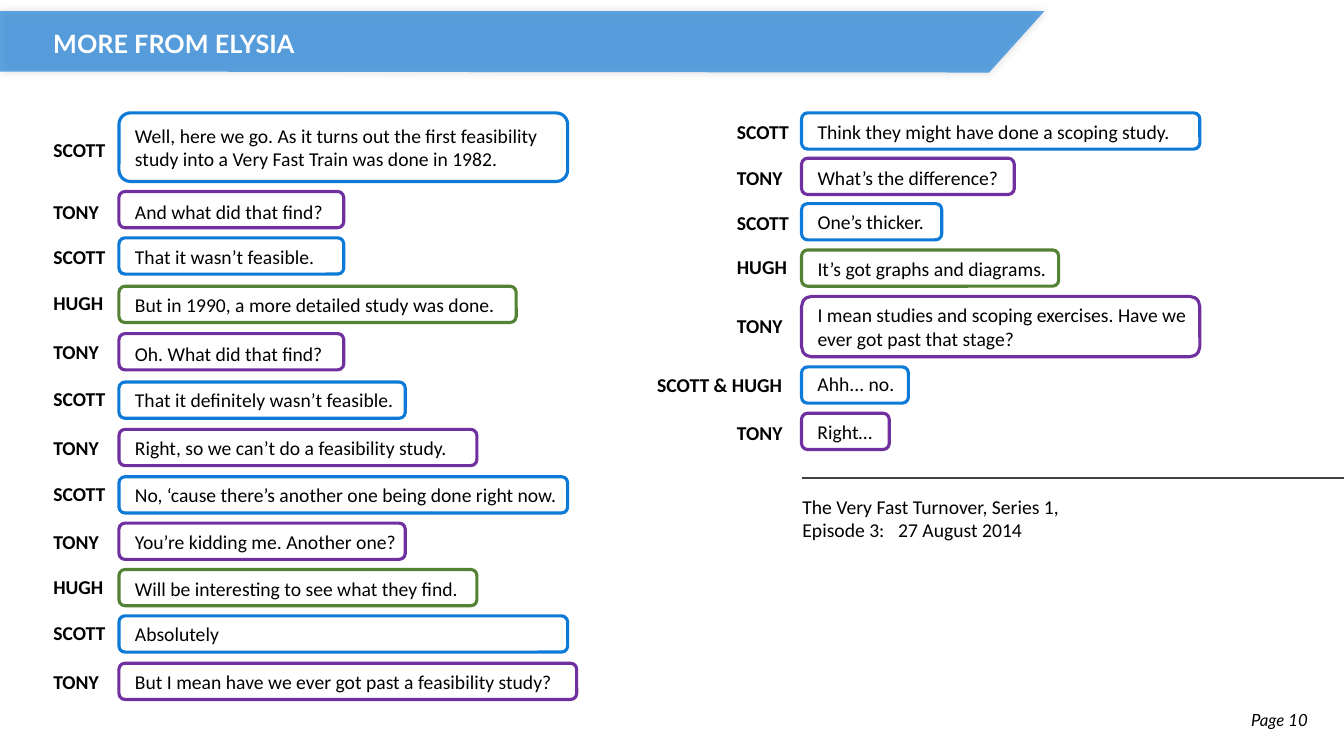
"""Build the "More from Elysia" dialogue slide."""
from lxml import etree
from pptx import Presentation
from pptx.dml.color import RGBColor
from pptx.enum import shapes, text
from pptx.oxml import parse_xml
from pptx.oxml.ns import nsdecls, qn
from pptx.util import Inches, Pt

BLUE, PURPLE, GREEN = "0E7AD8", "7030A0", "548235"
SPEAKER_COLOURS = {"SCOTT": BLUE, "SCOTT & HUGH": BLUE, "TONY": PURPLE, "HUGH": GREEN}

LEFT_LINES = [
    ("SCOTT", 1.32, 1.12, 1.18, 4.45, 0.68, "Well, here we go. As it turns out the first feasibility "
     "study into a Very Fast Train was done in 1982."),
    ("TONY", 1.93, 1.9, 1.93, 2.23, 0.36, "And what did that find?"),
    ("SCOTT", 2.38, 2.36, 2.38, 2.23, 0.36, "That it wasn’t feasible."),
    ("HUGH", 2.84, 2.84, 2.86, 3.94, 0.36, "But in 1990, a more detailed study was done."),
    ("TONY", 3.32, 3.31, 3.34, 2.23, 0.36, "Oh. What did that find?"),
    ("SCOTT", 3.79, 3.79, 3.8, 2.84, 0.36, "That it definitely wasn’t feasible."),
    ("TONY", 4.28, 4.26, 4.28, 3.55, 0.36, "Right, so we can’t do a feasibility study."),
    ("SCOTT", 4.73, 4.73, 4.74, 4.45, 0.36, "No, ‘cause there’s another one being done right now."),
    ("TONY", 5.21, 5.19, 5.21, 2.84, 0.36, "You’re kidding me. Another one?"),
    ("HUGH", 5.65, 5.65, 5.67, 3.55, 0.36, "Will be interesting to see what they find."),
    ("SCOTT", 6.11, 6.11, 6.12, 4.45, 0.36, "Absolutely"),
    ("TONY", 6.6, 6.58, 6.6, 4.54, 0.36, "But I mean have we ever got past a feasibility study?"),
]
RIGHT_LINES = [
    ("SCOTT", 1.14, 1.12, 1.14, 3.95, 0.36, "Think they might have done a scoping study."),
    ("TONY", 1.6, 1.57, 1.6, 2.11, 0.36, "What’s the difference?"),
    ("SCOTT", 2.04, 2.02, 2.03, 1.39, 0.36, "One’s thicker."),
    ("HUGH", 2.48, 2.48, 2.5, 2.55, 0.36, "It’s got graphs and diagrams."),
    ("TONY", 3.07, 2.94, 2.96, 3.95, 0.6, "I mean studies and scoping exercises. "
     "Have we ever got past that stage?"),
    ("SCOTT & HUGH", 3.65, 3.64, 3.64, 1.06, 0.36, "Ahh... no."),
    ("TONY", 4.13, 4.1, 4.12, 0.87, 0.36, "Right…"),
]


def colour(value):
    return RGBColor.from_string(value)


def add_text(words, left, top, width, height, size=14, name="Calibri", ink="000000",
             bold=False, italic=False):
    box = page.shapes.add_textbox(Inches(left), Inches(top), Inches(width), Inches(height))
    box.text_frame.word_wrap = True
    box.text_frame.auto_size = text.MSO_AUTO_SIZE.SHAPE_TO_FIT_TEXT
    para = box.text_frame.paragraphs[0]
    para.text = words
    for span in para.runs:
        span.font.name, span.font.size = name, Pt(size)
        span.font.bold, span.font.italic = bold, italic
        span.font.color.rgb = colour(ink)
    return para


deck = Presentation()
deck.slide_width, deck.slide_height = Inches(13.33), Inches(7.5)
page = deck.slides.add_slide(deck.slide_layouts[6])

outline = page.shapes.build_freeform(0, Inches(0.11))
outline.add_line_segments([(Inches(x), Inches(y)) for x, y in ((10.36, 0.11), (9.81, 0.72), (0, 0.71))])
banner = outline.convert_to_shape()
banner.fill.solid()
banner.fill.fore_color.rgb = colour(BLUE)
banner.line.fill.background()
fill_colour = banner._element.spPr.find(qn("a:solidFill"))[0]
etree.SubElement(fill_colour, qn("a:alpha"), val="65000")
banner._element.spPr.append(parse_xml(
    f'<a:effectLst {nsdecls("a")}><a:outerShdw blurRad="{Pt(6)}" dist="0" dir="13500000">'
    '<a:srgbClr val="000000"><a:alpha val="20000"/></a:srgbClr></a:outerShdw></a:effectLst>'))

add_text("MORE FROM ELYSIA", 0.43, 0.23, 12.9, 0.4, size=18, name="Lato", ink="FFFFFF", bold=True)

for name_left, bubble_left, lines in ((0.43, 1.18, LEFT_LINES), (7.21, 7.95, RIGHT_LINES)):
    for speaker, name_top, bubble_top, words_top, width, height, words in lines:
        if speaker == "SCOTT & HUGH":
            add_text(speaker, 6.42, name_top, 1.53, 0.34, bold=True)
        else:
            add_text(speaker, name_left, name_top, 1.39, 0.34, bold=True)
        bubble = page.shapes.add_shape(
            shapes.MSO_SHAPE.ROUNDED_RECTANGLE,
            Inches(bubble_left), Inches(bubble_top), Inches(width), Inches(height))
        bubble.shadow.inherit = False
        bubble.fill.background()
        bubble.line.color.rgb = colour(SPEAKER_COLOURS[speaker])
        bubble.line.width = Pt(2.25)
        add_text(words, bubble_left + 0.06, words_top, width, 0.57 if height > 0.4 else 0.34)

credit = add_text("The Very Fast Turnover, Series 1, Episode 3:\t27 August 2014", 7.86, 4.86, 3.1, 0.57)
tabs = etree.SubElement(credit._p.get_or_add_pPr(), qn("a:tabLst"))
etree.SubElement(tabs, qn("a:tab"), pos=str(Inches(0.95)), algn="l")

rule = page.shapes.add_connector(
    shapes.MSO_CONNECTOR.STRAIGHT, Inches(7.95), Inches(4.74), Inches(13.33), Inches(4.74))
rule.line.color.rgb = colour("404040")
rule.line.width = Pt(1.5)
etree.SubElement(rule._element.spPr, qn("a:effectLst"))

add_text("Page 10", 12.31, 6.99, 0.91, 0.3, size=12, name="Lato", italic=True)

deck.save("out.pptx")
